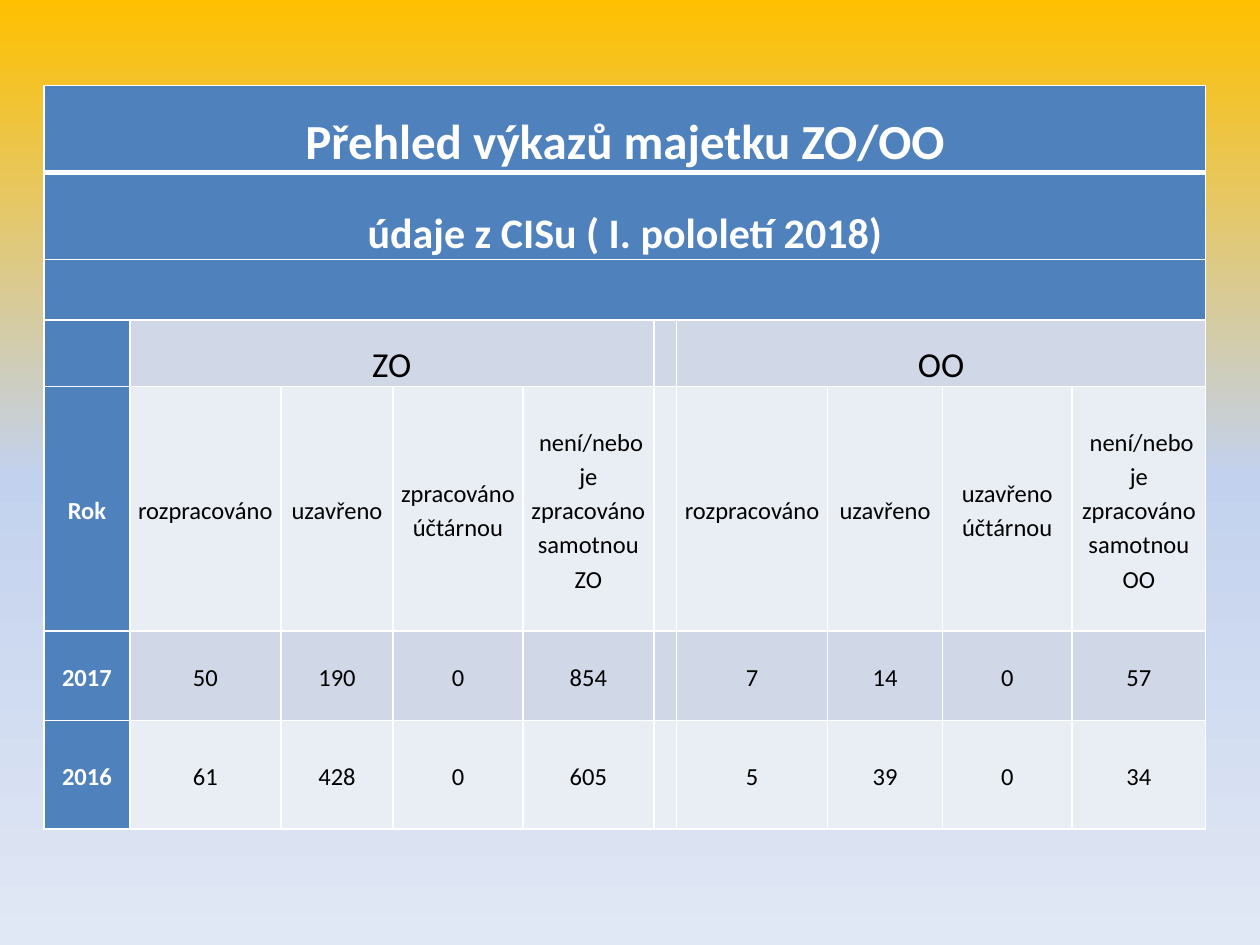
from lxml import etree
from pptx import Presentation
from pptx.dml.color import RGBColor
from pptx.enum.text import MSO_ANCHOR, PP_ALIGN
from pptx.oxml.ns import qn
from pptx.util import Inches, Pt

BOTTOM, MIDDLE = MSO_ANCHOR.BOTTOM, MSO_ANCHOR.MIDDLE
CENTER = PP_ALIGN.CENTER
COLORS = {"header": "4F81BD", "band": "D0D8E8", "light": "E9EDF4",
          "white": "FFFFFF", "black": "000000"}
BACKGROUND = [(0, "FFC000"), (50, "C2D1ED"), (100, "E1E8F5")]

COL_WIDTHS = [0.68, 1.2, 0.89, 1.03, 1.04, 0.18, 1.2, 0.91, 1.03, 1.06]
ROW_HEIGHTS = [0.69, 0.69, 0.48, 0.53, 1.94, 0.71, 0.86]
TITLE_ROWS = 3
GROUP_ROW = 3
GROUP_COLS = [(1, 4), (6, 9)]
ROWS = [
    ["Přehled výkazů majetku ZO/OO"] + [""] * 9,
    ["údaje z CISu ( I. pololetí 2018)"] + [""] * 9,
    [""] * 10,
    ["", "ZO", "", "", "", "", "OO", "", "", ""],
    ["Rok", "rozpracováno", "uzavřeno", "zpracováno účtárnou",
     " není/nebo je zpracováno samotnou ZO", "",
     "rozpracováno", "uzavřeno", "uzavřeno účtárnou",
     " není/nebo je zpracováno samotnou OO"],
    ["2017", "50", "190", "0", "854", "", "7", "14", "0", "57"],
    ["2016", "61", "428", "0", "605", "", "5", "39", "0", "34"],
]
TEXT_SIZES = [28, 24, 14, 20, 14, 14, 14]


def paint_background(s):
    fill = s.background.fill
    fill.gradient()
    fill.gradient_angle = 270
    stops = next(s.element.iter(qn("a:gsLst")))
    for stop in list(stops):
        stops.remove(stop)
    for percent, color in BACKGROUND:
        stop = etree.SubElement(stops, qn("a:gs"), pos=str(percent * 1000))
        etree.SubElement(stop, qn("a:srgbClr"), val=color)


def add_borders(cell, row):
    """White lines, with a thicker one under the title."""
    widths = {"L": 1, "R": 1, "T": 3 if row == 1 else 1, "B": 3 if row == 0 else 1}
    tcPr = cell._tc.get_or_add_tcPr()
    for side, width in widths.items():
        ln = etree.SubElement(tcPr, qn(f"a:ln{side}"), w=str(Pt(width)))
        fill = etree.SubElement(ln, qn("a:solidFill"))
        etree.SubElement(fill, qn("a:srgbClr"), val=COLORS["white"])


def style_cell(cell, row, col, text):
    is_header = row < TITLE_ROWS or col == 0
    add_borders(cell, row)
    cell.fill.solid()
    body = "band" if row % 2 else "light"
    cell.fill.fore_color.rgb = RGBColor.from_string(COLORS["header" if is_header else body])
    cell.margin_left = cell.margin_right = Inches(0.05)
    cell.margin_top = cell.margin_bottom = 0
    cell.vertical_anchor = BOTTOM if row <= GROUP_ROW else MIDDLE
    cell.text = text
    p = cell.text_frame.paragraphs[0]
    p.alignment = CENTER
    p.line_spacing = 1.15
    p.font.name = "Calibri"
    p.font.size = Pt(TEXT_SIZES[row])
    p.font.bold = is_header
    p.font.color.rgb = RGBColor.from_string(COLORS["white" if is_header else "black"])


def add_report_table(s, left, top, width, height):
    table = s.shapes.add_table(len(ROWS), len(COL_WIDTHS), left, top, width, height).table
    table.first_row = table.horz_banding = False
    for column, size in zip(table.columns, COL_WIDTHS):
        column.width = Inches(size)
    for row, size in zip(table.rows, ROW_HEIGHTS):
        row.height = Inches(size)
    for i, texts in enumerate(ROWS):
        for j, text in enumerate(texts):
            style_cell(table.cell(i, j), i, j, text)
    for i in range(TITLE_ROWS):
        table.cell(i, 0).merge(table.cell(i, len(COL_WIDTHS) - 1))
    for first, last in GROUP_COLS:
        table.cell(GROUP_ROW, first).merge(table.cell(GROUP_ROW, last))


def main():
    prs = Presentation()
    prs.slide_width, prs.slide_height = Inches(10), Inches(7.5)
    s = prs.slides.add_slide(prs.slide_layouts[6])
    paint_background(s)
    add_report_table(s, Inches(0.35), Inches(0.68), Inches(9.21), Inches(5.9))
    prs.save("out.pptx")


if __name__ == "__main__":
    main()
